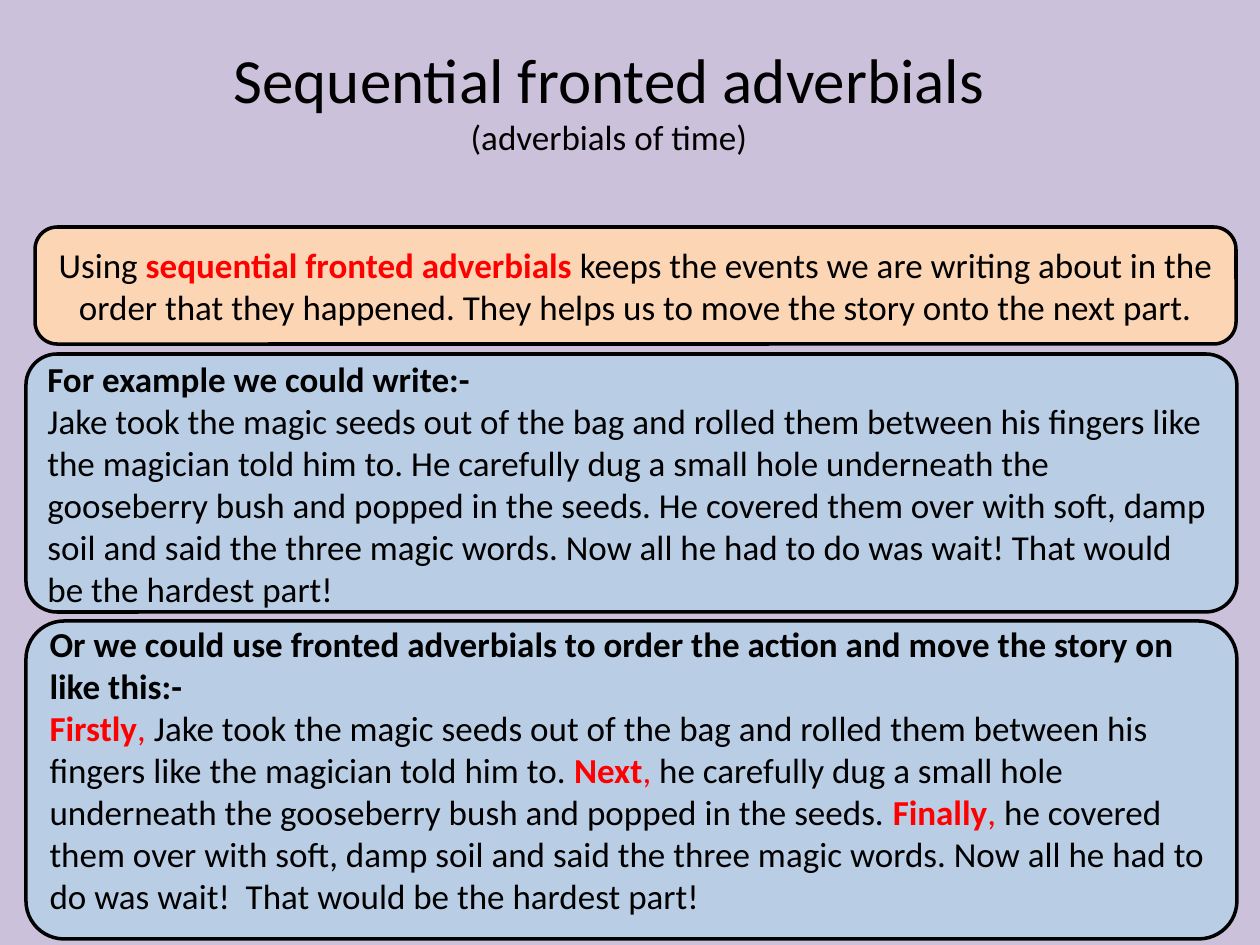
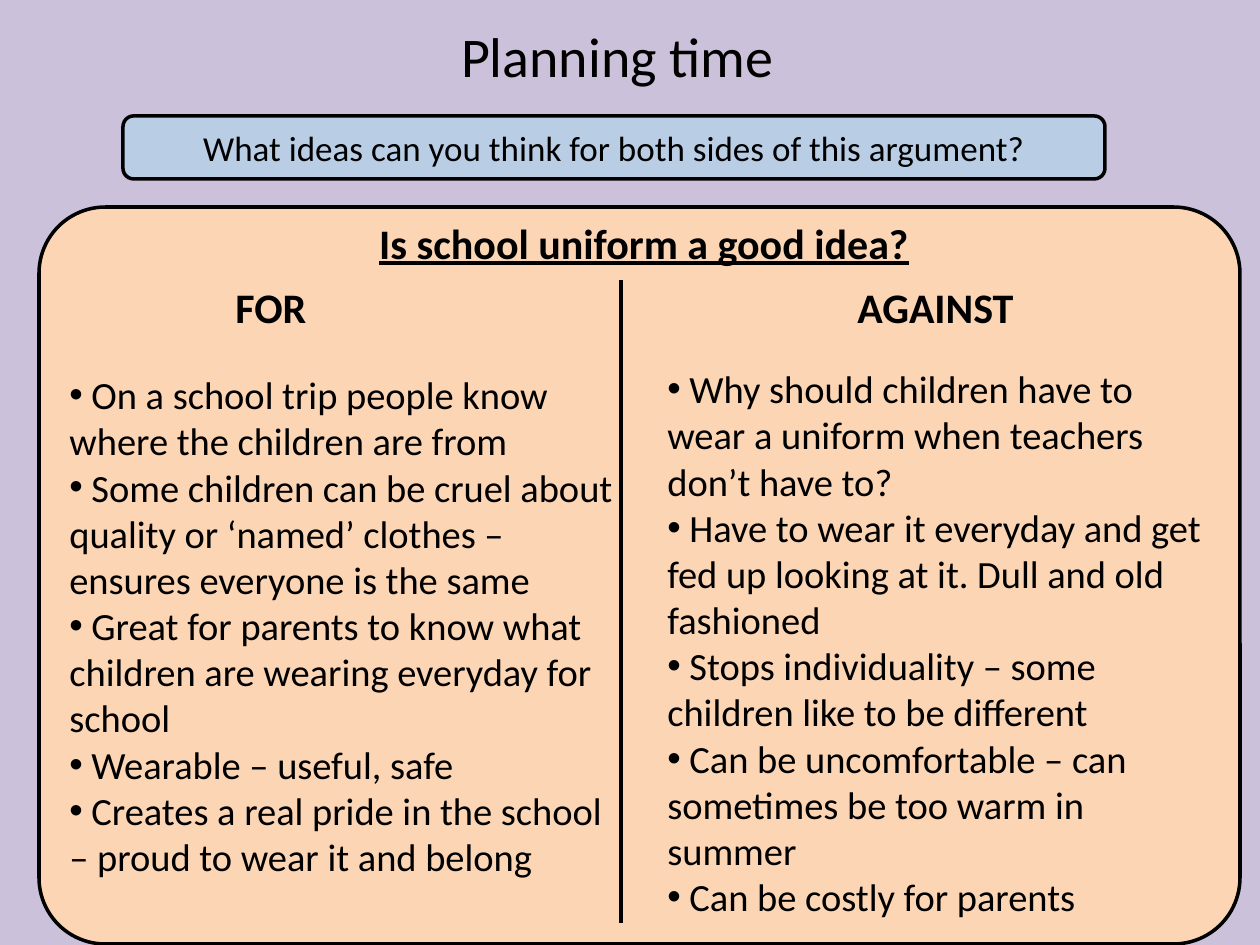
"""Build two literacy slides: sequential fronted adverbials and planning an argument."""
from dataclasses import dataclass

from lxml import etree
from pptx import Presentation
from pptx.dml.color import RGBColor
from pptx.enum.shapes import MSO_CONNECTOR, MSO_SHAPE
from pptx.enum.text import MSO_ANCHOR, MSO_AUTO_SIZE, PP_ALIGN
from pptx.oxml.ns import qn
from pptx.util import Pt

ROUNDED = MSO_SHAPE.ROUNDED_RECTANGLE
STRAIGHT = MSO_CONNECTOR.STRAIGHT
TOP, MIDDLE = MSO_ANCHOR.TOP, MSO_ANCHOR.MIDDLE
LEFT, CENTER = PP_ALIGN.LEFT, PP_ALIGN.CENTER
NO_AUTOFIT = MSO_AUTO_SIZE.NONE
SCALE = 914400 / 126
TITLE_ONLY = 5


@dataclass(frozen=True)
class Theme:
    background: RGBColor = RGBColor(0xCC, 0xC1, 0xDA)
    peach: RGBColor = RGBColor(0xFC, 0xD5, 0xB5)
    blue: RGBColor = RGBColor(0xB9, 0xCD, 0xE5)
    ink: RGBColor = RGBColor(0, 0, 0)
    red: RGBColor = RGBColor(0xFF, 0, 0)
    font: str = "Calibri"
    big_title: int = 36
    title: int = 32
    heading: int = 24
    points: int = 22
    body: int = 20
    outline: float = 2
    divider: float = 2.75


THEME = Theme()
BOLD = {"bold": True}
RED = {"color": THEME.red}
KEYWORD = {**BOLD, **RED}


def px(*lengths):
    return [round(length * SCALE) for length in lengths]


def write(shape, paragraphs, size=THEME.body, align=LEFT, anchor=TOP, bullet=None, **style):
    """Fill a shape with paragraphs made of (text, format) runs."""
    frame = shape.text_frame
    frame.word_wrap = True
    frame.auto_size = NO_AUTOFIT
    frame.vertical_anchor = anchor
    for index, runs in enumerate(paragraphs):
        paragraph = frame.add_paragraph() if index else frame.paragraphs[0]
        paragraph.alignment = align
        if bullet:
            properties = paragraph._p.get_or_add_pPr()
            etree.SubElement(properties, qn("a:buFont"), typeface="Arial")
            etree.SubElement(properties, qn("a:buChar"), char=bullet)
        for text, changes in runs:
            look = {"size": size, "color": THEME.ink, "bold": False, "underline": False, **style, **changes}
            run = paragraph.add_run()
            run.text = text
            run.font.name = THEME.font
            run.font.size = Pt(look["size"])
            run.font.color.rgb = look["color"]
            run.font.bold = look["bold"]
            run.font.underline = look["underline"]


presentation = Presentation()
presentation.slide_width, presentation.slide_height = px(1260, 945)
master_fill = presentation.slide_master.background.fill
master_fill.solid()
master_fill.fore_color.rgb = THEME.background

titles = [
    ((218, 34, 782, 131), THEME.big_title,
     [[("Sequential fronted adverbials", {})],
      [("(adverbials of time)", {"size": THEME.body})]]),
    ((241, 15, 753, 81), THEME.title, [[("Planning time", {})]]),
]
slides = []
for place, size, paragraphs in titles:
    slide = presentation.slides.add_slide(presentation.slide_layouts[TITLE_ONLY])
    title = slide.shapes.title
    title.left, title.top, title.width, title.height = px(*place)
    write(title, paragraphs, size=size, align=CENTER)
    slides.append(slide)
adverbials_slide, planning_slide = slides

purpose = [[
    ("Using ", {}),
    ("sequential fronted adverbials ", KEYWORD),
    ("keeps the events we are writing about in the order that they happened. "
     "They helps us to move the story onto the next part.", {}),
]]
plain_story = [
    [("For example we could write:-", BOLD)],
    [("Jake took the magic seeds out of the bag and rolled them between his fingers like "
      "the magician told him to. He carefully dug a small hole underneath the gooseberry "
      "bush and popped in the seeds. He covered them over with soft, damp soil and said the "
      "three magic words. Now all he had to do was wait! That would be the hardest part!", {})],
]
ordered_story = [
    [("Or we could use fronted adverbials to order the action and move the story on like this:-", BOLD)],
    [
        ("Firstly", KEYWORD), (", ", RED),
        ("Jake took the magic seeds out of the bag and rolled them between his fingers like "
         "the magician told him to. ", {}),
        ("Next", KEYWORD), (", ", RED),
        ("he carefully dug a small hole underneath the gooseberry bush and popped in the seeds. ", {}),
        ("Finally", KEYWORD), (", ", RED),
        ("he covered them over with soft, damp soil and said the three magic words. "
         "Now all he had to do was wait!  That would be the hardest part!", {}),
    ],
]
question = [[("What ideas can you think for both sides of this argument?", {})]]
panels = [
    (adverbials_slide, (35, 227, 1201, 117), 0.19, THEME.peach, purpose, CENTER, 6),
    (adverbials_slide, (26, 354, 1211, 258), 0.12, THEME.blue, plain_story, LEFT, 6),
    (adverbials_slide, (26, 621, 1211, 318), 0.12, THEME.blue, ordered_story, LEFT, 27),
    (planning_slide, (39, 207, 1201, 737), 0.09, THEME.peach, [], CENTER, 6),
    (planning_slide, (123, 116, 982, 63), 0.17, THEME.blue, question, CENTER, 6),
]
for slide, place, corner, color, paragraphs, align, bottom_margin in panels:
    panel = slide.shapes.add_shape(ROUNDED, *px(*place))
    panel.shadow.inherit = False
    panel.adjustments[0] = corner
    panel.fill.solid()
    panel.fill.fore_color.rgb = color
    panel.line.color.rgb = THEME.ink
    panel.line.width = Pt(THEME.outline)
    panel.text_frame.margin_bottom = px(bottom_margin)[0]
    write(panel, paragraphs, align=align, anchor=MIDDLE)

headings = [
    ("Is school uniform a good idea?", (244, 211, 800, 63), CENTER, True),
    ("FOR", (223, 275, 141, 63), LEFT, False),
    ("AGAINST", (845, 275, 192, 63), LEFT, False),
]
for text, place, align, underline in headings:
    heading = planning_slide.shapes.add_textbox(*px(*place))
    write(heading, [[(text, {})]], size=THEME.heading, align=align, bold=True, underline=underline)

arguments = [
    ((57, 365, 576, 572), [
        " On a school trip people know where the children are from",
        " Some children can be cruel about quality or ‘named’ clothes – ensures everyone is the same",
        " Great for parents to know what children are wearing everyday for school",
        " Wearable – useful, safe",
        " Creates a real pride in the school – proud to wear it and belong",
    ]),
    ((655, 359, 566, 586), [
        " Why should children have to wear a uniform when teachers don’t have to?",
        " Have to wear it everyday and get fed up looking at it. Dull and old fashioned",
        " Stops individuality – some children like to be different",
        " Can be uncomfortable – can sometimes be too warm in summer",
        " Can be costly for parents",
    ]),
]
for place, points in arguments:
    column = planning_slide.shapes.add_textbox(*px(*place))
    write(column, [[(point, {})] for point in points], size=THEME.points, bullet="•")

divider = planning_slide.shapes.add_connector(STRAIGHT, *px(621, 280, 621, 923))
divider.line.color.rgb = THEME.ink
divider.line.width = Pt(THEME.divider)
etree.SubElement(divider._element.spPr, qn("a:effectLst"))

presentation.save("out.pptx")
